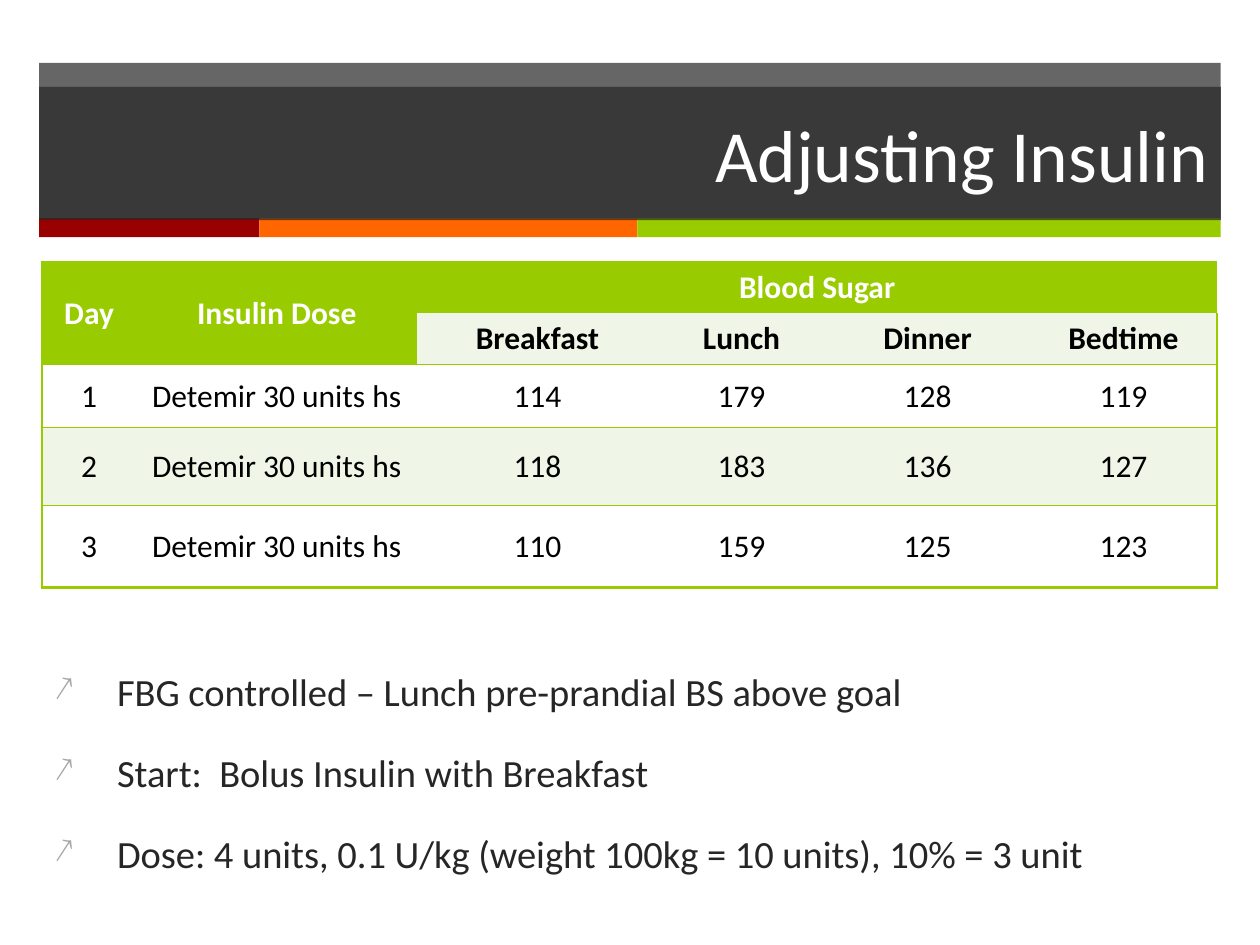
from pptx import Presentation
from pptx.dml.color import RGBColor
from pptx.enum.shapes import MSO_SHAPE
from pptx.enum.text import MSO_ANCHOR, PP_ALIGN
from pptx.oxml.ns import qn
from pptx.util import Cm, Pt
from lxml import etree

RECTANGLE = MSO_SHAPE.RECTANGLE
MIDDLE = MSO_ANCHOR.MIDDLE
CENTER, RIGHT = PP_ALIGN.CENTER, PP_ALIGN.RIGHT

FONT = "Calibri"
CHARCOAL, GREEN, PALE_GREEN, WHITE = "262626", "99CC00", "EFF6E7", "FFFFFF"
PLAIN_TABLE_STYLE = "{2D5ABB26-0587-4C30-8999-92F81FD0307C}"

BAND_LEFT, BAND_WIDTH = 0.79, 23.82
CONTENT_LEFT, CONTENT_WIDTH = 0.84, 23.7
STRIPES = [("990000", 4.44), ("FF6600", 7.62), (GREEN, 11.76)]

COLUMN_WIDTHS = [1.91, 5.66, 4.85, 3.38, 4.12, 3.78]
ROW_HEIGHTS = [1.03, 1.02, 1.27, 1.57, 1.65]
DOSE = "Detemir 30 units hs"
READINGS = [
    ["Day", "Insulin Dose", "Blood Sugar", "", "", ""],
    ["", "", "Breakfast", "Lunch", "Dinner", "Bedtime"],
    ["1", DOSE, "114", "179", "128", "119"],
    ["2", DOSE, "118", "183", "136", "127"],
    ["3", DOSE, "110", "159", "125", "123"],
]
ADVICE = [
    "FBG controlled – Lunch pre-prandial BS above goal",
    "Start:  Bolus Insulin with Breakfast",
    "Dose: 4 units, 0.1 U/kg (weight 100kg = 10 units), 10% = 3 unit",
]


def rgb(color):
    return RGBColor.from_string(color)


def add_child(parent, tag, **attributes):
    child = etree.SubElement(parent, qn(tag))
    for key, value in attributes.items():
        child.set(key, str(value))
    return child


def fill_solid(target, color, opacity=None):
    """Fill a shape or cell; opacity is a percentage."""
    target.fill.solid()
    target.fill.fore_color.rgb = rgb(color)
    if opacity is not None:
        srgb = target.fill._xPr.find(".//" + qn("a:srgbClr"))
        add_child(srgb, "a:alpha", val=opacity * 1000)


def set_font(paragraph, size, color, bold=False):
    font = paragraph.font
    font.name, font.size, font.bold = FONT, Pt(size), bold
    font.color.rgb = rgb(color)


def add_bar(slide, left, top, width, height, color, opacity=None):
    bar = slide.shapes.add_shape(RECTANGLE, Cm(left), Cm(top), Cm(width), Cm(height))
    bar.shadow.inherit = False
    bar.line.fill.background()
    fill_solid(bar, color, opacity)


def add_header(slide, text):
    add_bar(slide, BAND_LEFT, 1.27, BAND_WIDTH, 3.15, CHARCOAL, 70)
    left = BAND_LEFT
    for color, width in STRIPES:
        add_bar(slide, left, 4.4, width, 0.38, color)
        left += width

    title = slide.shapes.title
    title.element.getparent().append(title.element)  # in front of the bars
    title.left, title.top = Cm(BAND_LEFT), Cm(1.75)
    title.width, title.height = Cm(BAND_WIDTH), Cm(2.69)
    fill_solid(title, CHARCOAL, 70)
    title.text_frame.text = text
    title.text_frame.vertical_anchor = MIDDLE
    paragraph = title.text_frame.paragraphs[0]
    paragraph.alignment = RIGHT
    set_font(paragraph, 42, WHITE)


def add_borders(cell, row, column):
    """Frame the table and rule off its rows; call before filling the cell."""
    last_row, last_column = len(READINGS) - 1, len(COLUMN_WIDTHS) - 1
    frame = {
        "a:lnL": column == 0,
        "a:lnR": column == last_column,
        "a:lnT": row == 0,
        "a:lnB": row == last_row,
    }
    ruled = {"a:lnT": row >= 2, "a:lnB": row >= 1}
    properties = cell._tc.get_or_add_tcPr()
    for side, on_frame in frame.items():
        if on_frame or ruled.get(side):
            line = add_child(properties, side, w=Pt(1.5 if on_frame else 1))
            add_child(add_child(line, "a:solidFill"), "a:srgbClr", val=GREEN)


def format_cell(cell, row, column, text):
    is_green = row == 0 or (row == 1 and column < 2)
    add_borders(cell, row, column)
    fill_solid(cell, GREEN if is_green else PALE_GREEN if row % 2 else WHITE)
    cell.margin_left = cell.margin_right = Cm(0.13)
    cell.margin_top = cell.margin_bottom = Cm(0.13)
    cell.vertical_anchor = MIDDLE
    cell.text = text
    paragraph = cell.text_frame.paragraphs[0]
    paragraph.alignment = CENTER
    set_font(paragraph, 18, WHITE if is_green else "000000", bold=row < 2)


def add_readings_table(slide):
    frame = slide.shapes.add_table(
        len(READINGS), len(COLUMN_WIDTHS),
        Cm(CONTENT_LEFT), Cm(5.28), Cm(CONTENT_WIDTH), Cm(sum(ROW_HEIGHTS)))
    table = frame.table
    table._tbl.tblPr.find(qn("a:tableStyleId")).text = PLAIN_TABLE_STYLE
    for column, width in zip(table.columns, COLUMN_WIDTHS):
        column.width = Cm(width)
    for row, height in zip(table.rows, ROW_HEIGHTS):
        row.height = Cm(height)
    for r, texts in enumerate(READINGS):
        for c, text in enumerate(texts):
            format_cell(table.cell(r, c), r, c, text)
    for first, last in [((0, 0), (1, 0)), ((0, 1), (1, 1)), ((0, 2), (0, 5))]:
        table.cell(*first).merge(table.cell(*last))


def add_bullet(paragraph):
    properties = paragraph._p.get_or_add_pPr()
    properties.set("marL", str(Cm(1.27)))
    properties.set("indent", str(Cm(-1.27)))
    add_child(add_child(properties, "a:buClr"), "a:srgbClr", val="A6A6A6")
    add_child(properties, "a:buSzPct", val=90000)
    add_child(properties, "a:buChar", char="↗")


def add_advice(slide):
    box = slide.shapes.add_textbox(
        Cm(CONTENT_LEFT), Cm(13.34), Cm(CONTENT_WIDTH), Cm(4.47))
    frame = box.text_frame
    frame.word_wrap = True
    frame.text = "\n".join(ADVICE)
    for paragraph in frame.paragraphs:
        paragraph.space_before = Pt(20)
        add_bullet(paragraph)
        set_font(paragraph, 22, CHARCOAL)


def main():
    presentation = Presentation()
    presentation.slide_width, presentation.slide_height = Cm(25.4), Cm(19.05)
    title_only = presentation.slide_layouts[5]
    slide = presentation.slides.add_slide(title_only)
    add_header(slide, "Adjusting Insulin")
    add_readings_table(slide)
    add_advice(slide)
    presentation.save("out.pptx")


if __name__ == "__main__":
    main()
